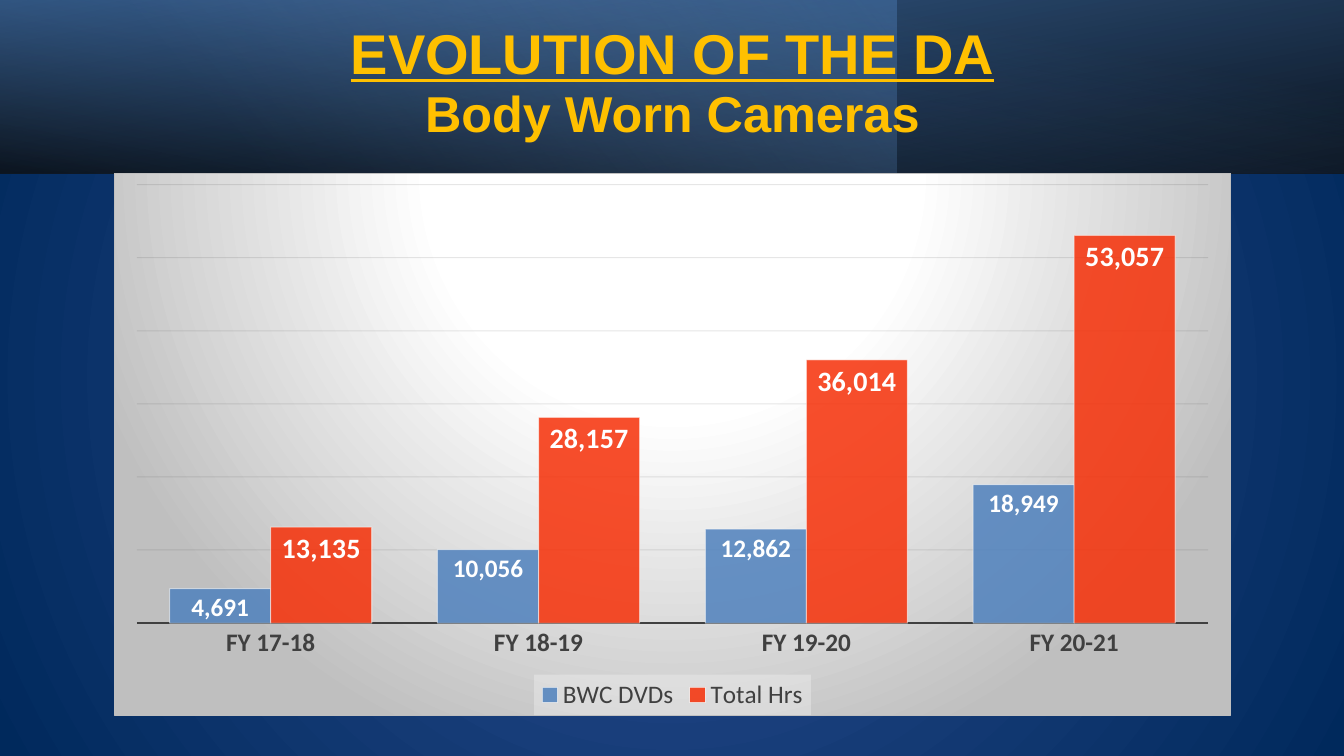
from lxml.etree import SubElement
from pptx import Presentation
from pptx.chart.data import CategoryChartData
from pptx.dml.color import RGBColor
from pptx.enum.chart import XL_CHART_TYPE, XL_LABEL_POSITION, XL_LEGEND_POSITION, XL_TICK_MARK
from pptx.enum.shapes import MSO_SHAPE
from pptx.enum.text import MSO_ANCHOR, PP_ALIGN
from pptx.oxml import parse_xml
from pptx.oxml.ns import nsdecls, qn
from pptx.util import Inches, Pt

# Content
HEADS = [("EVOLUTION OF THE DA", 40, True), ("Body Worn Cameras", 36, False)]
YEARS = ["FY 17-18", "FY 18-19", "FY 19-20", "FY 20-21"]
# name, values, colour, label size
BARS = [
    ("BWC DVDs", [4691, 10056, 12862, 18949], "blue", 18),
    ("Total Hrs", [13135, 28157, 36014, 53057], "red", 20),
]
HUES = {
    "gold": "FFC000", "white": "FFFFFF", "grey": "404040", "silver": "BFBFBF",
    "pale": "F2F2F2", "ink": "0D0D0D", "black": "000000", "blue": "4F81BD",
    "red": "F63008", "navy": "376092", "sky": "95B3D7",
    "glow": "5E7CC5", "mid": "2E5095", "deep": "00295C",
}
WIDE, BAND = 13.33, 1.72
# width, rotation, mirrored, gradient angle, stops (place, colour, opacity)
LAYERS = [
    (WIDE, 180, True, 100, [(0, "black", 96), (100, "navy", 100)]),
    (8.89, 0, False, 140, [(0, "blue", 41), (74, "sky", 0)]),
    (WIDE, 0, True, 260, [(0, "black", 63), (78, "blue", 15)]),
]
FORMAT = "#,##0"


def rgb(hue):
    return RGBColor.from_string(HUES[hue])


def grad(stops, angle=None, rect=None):
    """Gradient fill: linear with an angle, circular with a rect."""
    marks = "".join(
        f'<a:gs pos="{at * 1000}"><a:srgbClr val="{HUES[hue]}">'
        f'<a:alpha val="{alpha * 1000}"/></a:srgbClr></a:gs>'
        for at, hue, alpha in stops)
    if rect:
        sides = " ".join(f'{side}="{part * 1000}"' for side, part in zip("ltrb", rect))
        way = f'<a:path path="circle"><a:fillToRect {sides}/></a:path>'
    else:
        way = f'<a:lin ang="{angle * 60000}" scaled="0"/>'
    return parse_xml(f'<a:gradFill {nsdecls("a")} rotWithShape="1">'
                     f'<a:gsLst>{marks}</a:gsLst>{way}</a:gradFill>')


def swap(fill, root, new):
    """Put a custom gradient in place of a default one."""
    fill.gradient()
    old = next(root.iter(qn("a:gradFill")))
    old.getparent().replace(old, new)


def fade(fill, hue, alpha):
    """Solid fill with an opacity in percent."""
    fill.solid()
    fill.fore_color.rgb = rgb(hue)
    tint = fill._xPr.find(qn("a:solidFill")).find(qn("a:srgbClr"))
    SubElement(tint, qn("a:alpha"), val=str(alpha * 1000))


def style(font, size, hue, face="Calibri", bold=False, line=None):
    font.name, font.size, font.bold = face, Pt(size), bold
    font.color.rgb = rgb(hue)
    if line is not None:
        font.underline = line


def write(para, text, **look):
    para.alignment = PP_ALIGN.CENTER
    para.line_spacing, para.space_before, para.space_after = 0.8, Pt(0), Pt(6)
    run = para.add_run()
    run.text = text
    style(run.font, **look)


deck = Presentation()
deck.slide_width, deck.slide_height = Inches(WIDE), Inches(7.5)
slide = deck.slides.add_slide(deck.slide_layouts[5])

# Background
back = slide.background
swap(back.fill, slide.element, grad(
    [(0, "glow", 100), (0, "mid", 100), (100, "deep", 100)], rect=(50, 50, 50, 50)))

# Header band
for width, turn, flip, angle, stops in LAYERS:
    layer = slide.shapes.add_shape(MSO_SHAPE.RECTANGLE, 0, 0, Inches(width), Inches(BAND))
    layer.shadow.inherit = False
    layer.line.fill.background()
    layer.rotation = turn
    if flip:
        layer.element.spPr.find(qn("a:xfrm")).set("flipH", "1")
    swap(layer.fill, layer.element, grad(stops, angle=angle))

# Title, above the band
title = slide.shapes.title
slide.shapes._spTree.append(title.element)
title.left, title.top, title.width, title.height = map(Inches, (0.66, 0.23, 12.02, 1.27))
frame = title.text_frame
frame.word_wrap = True
frame.vertical_anchor = MSO_ANCHOR.MIDDLE
for i, (text, size, line) in enumerate(HEADS):
    para = frame.add_paragraph() if i else frame.paragraphs[0]
    write(para, text, size=size, hue="gold", face="Arial", bold=True, line=line)

# Chart
data = CategoryChartData(number_format=FORMAT)
data.categories = YEARS
for name, values, *_ in BARS:
    data.add_series(name, values)
chart = slide.shapes.add_chart(
    XL_CHART_TYPE.COLUMN_CLUSTERED, Inches(1.13), Inches(BAND),
    Inches(11.08), Inches(5.38), data).chart
style(chart.font, 10, "white")
chart.has_title = False

# Chart panel and plot area
panel = parse_xml(
    f'<c:spPr {nsdecls("c", "a")}><a:ln w="9525"><a:solidFill>'
    f'<a:srgbClr val="{HUES["silver"]}"/></a:solidFill></a:ln></c:spPr>')
panel.insert(0, grad([(0, "white", 100), (39, "white", 100), (100, "silver", 100)],
                     rect=(50, -80, 50, 180)))
space = chart.element
space.find(qn("c:txPr")).addprevious(panel)
area = next(space.iter(qn("c:plotArea")))
for old in area.findall(qn("c:layout")):
    area.remove(old)
area.insert(0, parse_xml(
    f'<c:layout {nsdecls("c")}><c:manualLayout><c:layoutTarget val="inner"/>'
    '<c:xMode val="edge"/><c:yMode val="edge"/><c:x val="0.02"/><c:y val="0.02"/>'
    '<c:w val="0.96"/><c:h val="0.81"/></c:manualLayout></c:layout>'))

# Axes
years = chart.category_axis
years.major_tick_mark = XL_TICK_MARK.NONE
years.format.line.color.rgb = rgb("grey")
years.format.line.width = Pt(1.5)
style(years.tick_labels.font, 18, "grey", bold=True)
scale = chart.value_axis
scale.visible = False
scale.minimum_scale, scale.maximum_scale, scale.major_unit = 0, 60000, 10000
grid = scale.major_gridlines.format.line
grid.width = Pt(0.75)
fade(grid.fill, "ink", 10)

# Columns
plot = chart.plots[0]
plot.gap_width, plot.overlap, plot.vary_by_categories = 65, 0, False
for bar, (_, _, hue, size) in zip(plot.series, BARS):
    bar.invert_if_negative = False
    fade(bar.format.fill, hue, 85)
    bar.format.line.width = Pt(0.75)
    fade(bar.format.line.fill, "white", 50)
    tags = bar.data_labels
    tags.show_value = True
    tags.position = XL_LABEL_POSITION.INSIDE_END
    tags.number_format, tags.number_format_is_linked = FORMAT, False
    style(tags.font, size, "white", bold=True)

# Legend
chart.has_legend = True
key = chart.legend
key.position, key.include_in_layout = XL_LEGEND_POSITION.BOTTOM, False
style(key.font, 18, "grey")
key._element.find(qn("c:txPr")).addprevious(parse_xml(
    f'<c:spPr {nsdecls("c", "a")}><a:solidFill><a:srgbClr val="{HUES["pale"]}">'
    '<a:alpha val="39000"/></a:srgbClr></a:solidFill></c:spPr>'))

deck.save("out.pptx")
